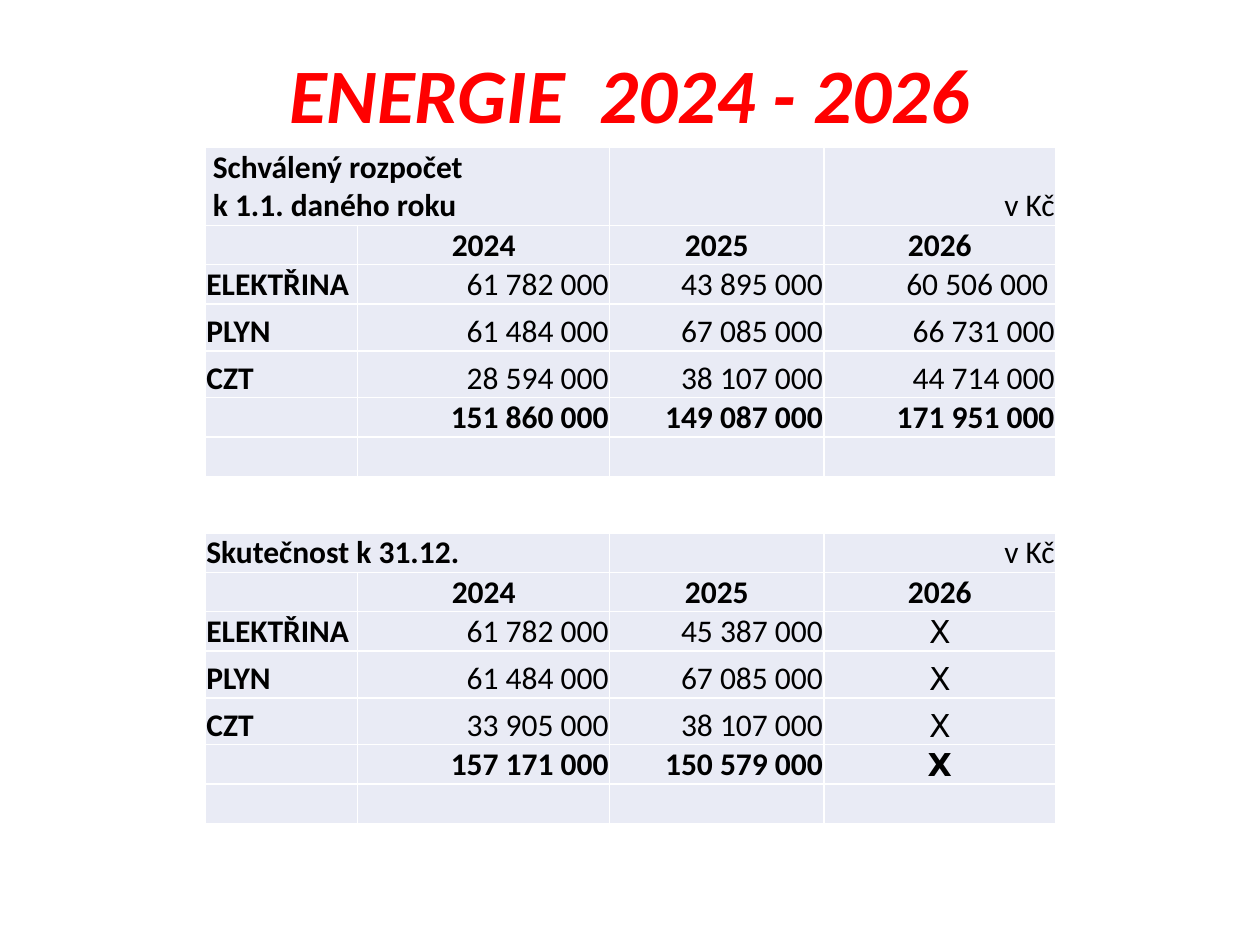
from dataclasses import dataclass

from lxml.etree import SubElement
from pptx import Presentation
from pptx.dml.color import RGBColor
from pptx.enum.text import MSO_ANCHOR as Anchor, PP_ALIGN as Align
from pptx.oxml.ns import qn
from pptx.util import Cm, Pt


@dataclass(frozen=True)
class Theme:
    font: str = "Calibri"
    mark_font: str = "DejaVu Sans"
    title_size: int = 44
    body_size: int = 18
    title_color: str = "FF0000"
    text_color: str = "000000"
    cell_color: str = "E9EBF5"
    border_color: str = "FFFFFF"
    border_width: int = Pt(1)


THEME = Theme()
MARK = "X"
TITLE_ROW, YEAR_ROW, TOTAL_ROW = 0, 1, 5
TABLE_LEFT = Cm(4.14)
COLUMN_WIDTHS = [3.07, 5.08, 4.32, 4.67]
ROW_HEIGHTS = [0.58, 0.56, 0.74, 0.94, 0.94, 0.51, 0.76]
INSET, WIDE_INSET = Cm(0.02), Cm(0.15)
YEARS = ["", "2024", "2025", "2026"]
EMPTY = [""] * 4

BUDGET = [
    ["Schválený rozpočet\nk 1.1. daného roku", "", "", "v Kč"],
    YEARS,
    ["ELEKTŘINA", "61 782 000", "43 895 000", "60 506 000"],
    ["PLYN", "61 484 000", "67 085 000", "66 731 000"],
    ["CZT", "28 594 000", "38 107 000", "44 714 000"],
    ["", "151 860 000", "149 087 000", "171 951 000"],
    EMPTY,
]
ACTUAL = [
    ["Skutečnost k 31.12.", "", "", "v Kč"],
    YEARS,
    ["ELEKTŘINA", "61 782 000", "45 387 000", MARK],
    ["PLYN", "61 484 000", "67 085 000", MARK],
    ["CZT", "33 905 000", "38 107 000", MARK],
    ["", "157 171 000", "150 579 000", MARK],
    EMPTY,
]


def format_text(frame, align, name, size, color, bold, italic=False):
    for para in frame.paragraphs:
        para.alignment = align
        for span in para.runs:
            font = span.font
            font.name, font.size = name, Pt(size)
            font.bold, font.italic = bold, italic
            font.color.rgb = RGBColor.from_string(color)


def add_title(page, text):
    title = page.shapes.title
    title.left, title.top = Cm(1.75), Cm(1.02)
    title.width, title.height = Cm(21.9), Cm(3.68)
    frame = title.text_frame
    frame.text = text
    frame.vertical_anchor = Anchor.TOP
    frame.paragraphs[0].line_spacing = 0.9
    format_text(frame, Align.CENTER, THEME.font, THEME.title_size,
                THEME.title_color, bold=True, italic=True)


def set_borders(cell):
    properties = cell._tc.get_or_add_tcPr()
    for index, side in enumerate(("a:lnL", "a:lnR", "a:lnT", "a:lnB")):
        line = SubElement(properties, qn(side), w=str(THEME.border_width))
        fill = SubElement(line, qn("a:solidFill"))
        SubElement(fill, qn("a:srgbClr"), val=THEME.border_color)
        properties.insert(index, line)


def cell_alignment(text, row, column):
    if row == YEAR_ROW or text == MARK:
        return Align.CENTER
    return Align.LEFT if column == 0 else Align.RIGHT


def fill_cell(cell, text, row, column):
    cell.margin_left = cell.margin_right = cell.margin_top = INSET
    cell.margin_bottom = 0
    cell.vertical_anchor = Anchor.BOTTOM
    cell.fill.solid()
    cell.fill.fore_color.rgb = RGBColor.from_string(THEME.cell_color)
    set_borders(cell)
    cell.text_frame.text = text
    format_text(cell.text_frame, cell_alignment(text, row, column),
                THEME.mark_font if text == MARK else THEME.font,
                THEME.body_size, THEME.text_color,
                bold=column == 0 or row in (YEAR_ROW, TOTAL_ROW))


def add_energy_table(page, top, rows):
    frame = page.shapes.add_table(
        len(rows), len(COLUMN_WIDTHS), TABLE_LEFT, top,
        Cm(sum(COLUMN_WIDTHS)), Cm(sum(ROW_HEIGHTS)))
    table = frame.table
    table.first_row = table.horz_banding = False
    for column, width in zip(table.columns, COLUMN_WIDTHS):
        column.width = Cm(width)
    for row, height in zip(table.rows, ROW_HEIGHTS):
        row.height = Cm(height)
    for row, texts in enumerate(rows):
        for column, text in enumerate(texts):
            fill_cell(table.cell(row, column), text, row, column)
    table.cell(TITLE_ROW, 0).merge(table.cell(TITLE_ROW, 1))
    return table


def main():
    deck = Presentation()
    deck.slide_width, deck.slide_height = Cm(25.4), Cm(19.05)
    page = deck.slides.add_slide(deck.slide_layouts[5])
    add_title(page, "ENERGIE  2024 - 2026")
    budget = add_energy_table(page, Cm(2.97), BUDGET)
    budget.cell(TITLE_ROW, 0).margin_left = WIDE_INSET
    budget.cell(2, 3).margin_right = WIDE_INSET
    add_energy_table(page, Cm(10.74), ACTUAL)
    deck.save("out.pptx")


if __name__ == "__main__":
    main()
